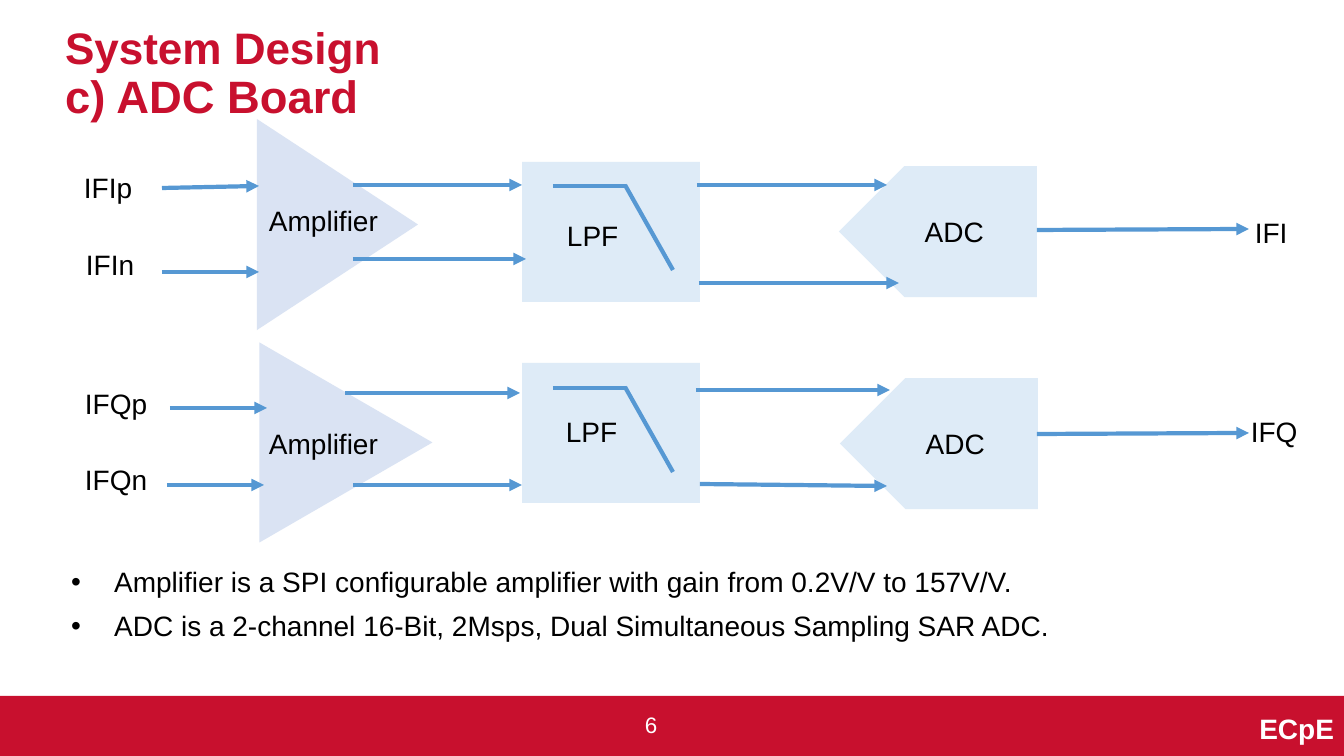
from lxml import etree
from pptx import Presentation
from pptx.dml.color import RGBColor
from pptx.enum.shapes import MSO_CONNECTOR, MSO_SHAPE
from pptx.enum.text import MSO_ANCHOR, MSO_AUTO_SIZE, PP_ALIGN
from pptx.oxml.ns import qn
from pptx.util import Emu, Pt

RECT, TRI, PLATE = MSO_SHAPE.RECTANGLE, MSO_SHAPE.ISOSCELES_TRIANGLE, MSO_SHAPE.PENTAGON
LINE = MSO_CONNECTOR.STRAIGHT
LEFT, MID, RIGHT = PP_ALIGN.LEFT, PP_ALIGN.CENTER, PP_ALIGN.RIGHT
CENTRE, TOP, FIXED = MSO_ANCHOR.MIDDLE, MSO_ANCHOR.TOP, MSO_AUTO_SIZE.NONE
RED = RGBColor(0xC8, 0x10, 0x2E)
WHITE = RGBColor(0xFF, 0xFF, 0xFF)
BLACK = RGBColor(0, 0, 0)
LILAC = RGBColor(0xDA, 0xE3, 0xF3)
PALE = RGBColor(0xDE, 0xEB, 0xF7)
BLUE = RGBColor(0x56, 0x98, 0xD3)
SCALE = 914400 / 100.8


def px(*nums):
    return [Emu(round(num * SCALE)) for num in nums]


def style(font, size, color=BLACK, bold=False):
    for key, val in {"name": "Arial", "size": Pt(size), "bold": bold}.items():
        setattr(font, key, val)
    font.color.rgb = color


deck = Presentation()
deck.slide_width, deck.slide_height = px(1344, 756)
slide = deck.slides.add_slide(deck.slide_layouts[1])
shapes = slide.shapes
title, body = shapes.title, slide.placeholders[1]

for holder, place, anchor in [
    (title, (55, 43, 1235, 64), CENTRE),
    (body, (54, 563, 1235, 106), TOP),
]:
    holder.left, holder.top, holder.width, holder.height = px(*place)
    form = {"word_wrap": True, "auto_size": FIXED, "vertical_anchor": anchor}
    for key, val in form.items():
        setattr(holder.text_frame, key, val)

head = title.text_frame.paragraphs[0]
head.alignment, head.line_spacing = LEFT, 0.9
run = head.add_run()
run.text = "System Design"
style(run.font, 31.5, RED, True)
head.add_line_break()
run = head.add_run()
run.text = "c) ADC Board"
style(run.font, 32.4, RED, True)

body.text_frame.text = (
    "Amplifier is a SPI configurable amplifier with gain from 0.2V/V to 157V/V.\n"
    "ADC is a 2-channel 16-Bit, 2Msps, Dual Simultaneous Sampling SAR ADC."
)
for num, para in enumerate(body.text_frame.paragraphs):
    props = para._p.get_or_add_pPr()
    hang, dent = px(50, -43)
    props.set("marL", str(hang))
    props.set("indent", str(dent))
    tint = etree.SubElement(props, qn("a:buClr"))
    etree.SubElement(tint, qn("a:srgbClr"), val=str(BLACK))
    etree.SubElement(props, qn("a:buFont"), typeface="Arial")
    etree.SubElement(props, qn("a:buChar"), char="•")
    para.line_spacing, para.space_before = 0.9, Pt(10 * num)
    style(para.font, 20)

for kind, place, fill, turn, text in [
    (RECT, (0, 696, 1344, 60), RED, 0, ""),
    (TRI, (232, 144, 211, 161), LILAC, 90, ""),
    (TRI, (246, 356, 200, 173), LILAC, 90, ""),
    (RECT, (522, 162, 178, 140), PALE, 0, ""),
    (RECT, (522, 363, 178, 140), PALE, 0, ""),
    (PLATE, (839, 166, 198, 131), PALE, 0, "ADC"),
    (PLATE, (840, 378, 198, 131), PALE, 0, "ADC"),
]:
    block = shapes.add_shape(kind, *px(*place))
    block.shadow.inherit = False
    block.fill.solid()
    block.fill.fore_color.rgb = fill
    block.line.fill.background()
    block.rotation = turn
    if text:
        block._element.spPr.find(qn("a:xfrm")).set("flipH", "1")
        block.text_frame.text = text
        block.text_frame.vertical_anchor = CENTRE
        para = block.text_frame.paragraphs[0]
        para.alignment = MID
        style(para.font, 20)

curves = []
for top in (186, 388):
    curves += [(553, top, 626, top), (625, top - 1, 673, top + 84)]
arrows = [
    (162, 188, 259, 186), (162, 272, 259, 272),
    (170, 408, 267, 408), (167, 485, 264, 485),
    (353, 185, 522, 185), (353, 259, 526, 259),
    (345, 393, 520, 393), (353, 485, 522, 485),
    (697, 185, 887, 185), (699, 283, 899, 283),
    (696, 390, 890, 390), (700, 484, 887, 486),
    (1037, 230, 1249, 229), (1037, 434, 1249, 433),
]
for ends in curves + arrows:
    wire = shapes.add_connector(LINE, *px(*ends))
    wire.line.color.rgb, wire.line.width = BLUE, Pt(3)
    if ends in arrows:
        etree.SubElement(wire.line._get_or_add_ln(), qn("a:tailEnd"), type="triangle")
    etree.SubElement(wire._element.spPr, qn("a:effectLst"))

plain, page, brand = (20, BLACK, False), (16, WHITE, False), (20, WHITE, True)
for text, place, form, align in [
    ("IFIp", (74, 166, 88, 44), plain, LEFT),
    ("IFIn", (76, 243, 81, 44), plain, LEFT),
    ("IFQp", (75, 382, 88, 44), plain, LEFT),
    ("IFQn", (75, 458, 88, 44), plain, LEFT),
    ("Amplifier", (259, 199, 136, 44), plain, LEFT),
    ("Amplifier", (259, 422, 136, 44), plain, LEFT),
    ("LPF", (557, 214, 93, 44), plain, LEFT),
    ("LPF", (556, 410, 93, 44), plain, LEFT),
    ("IFI", (1245, 211, 67, 44), plain, LEFT),
    ("IFQ", (1241, 410, 75, 44), plain, LEFT),
    ("6", (635, 706, 37, 37), page, LEFT),
    ("ECpE", (890, 708, 454, 40), brand, RIGHT),
]:
    label = shapes.add_textbox(*px(*place))
    frame = label.text_frame
    frame.word_wrap = True
    frame.text = text
    if align == RIGHT:
        frame.vertical_anchor = CENTRE
    para = frame.paragraphs[0]
    para.alignment = align
    style(para.font, *form)

deck.save("out.pptx")
